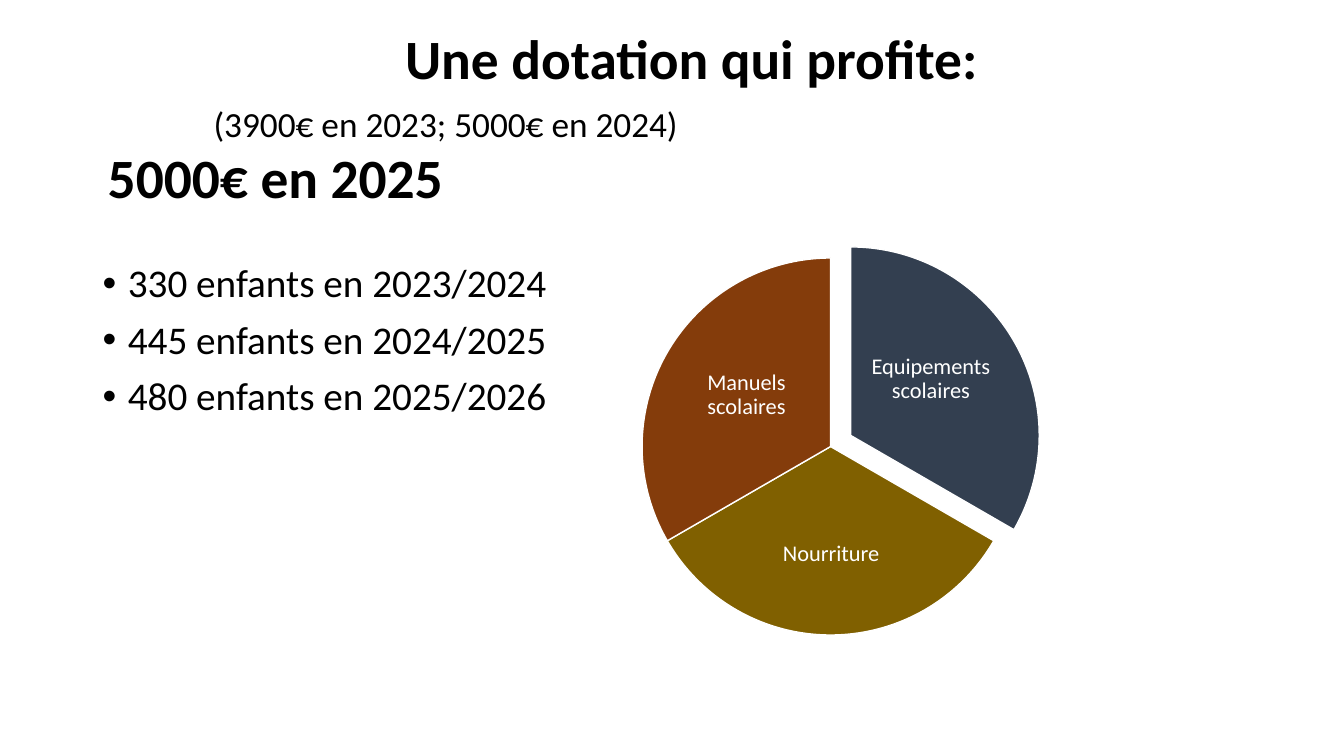
from pptx import Presentation
from pptx.dml.color import RGBColor
from pptx.enum.shapes import MSO_SHAPE as Shape
from pptx.enum.text import MSO_ANCHOR as Anchor, PP_ALIGN as Align
from pptx.oxml.ns import qn
from pptx.util import Inches, Pt
from lxml.etree import SubElement

COLORS = {
    "text": "000000",
    "label": "FFFFFF",
    "equipment": "333F50",
    "food": "806000",
    "books": "843C0B",
}
SLIDE_W, SLIDE_H = Inches(13.333), Inches(7.5)
FONT = "Calibri"
PIE_CENTER = (61.8, 59.07)
PIE_SIZE = (28.05, 49.87)
DEGREE = 0.6

HEADING = [
    ("Une dotation qui profite:", 39.6, True, 3, 0),
    ("(3900€ en 2023; 5000€ en 2024)", 25.2, False, 1.1, 11),
    ("5000€ en 2025", 39.6, True, 0.05, 4),
]
PUPILS = [
    "330 enfants en 2023/2024",
    "445 enfants en 2024/2025",
    "480 enfants en 2025/2026",
]
SHARES = [
    ("Equipements scolaires", "equipment", (1.5, -1.47), (64.5, 41.87, 9.53, 16.67)),
    ("Nourriture", "food", (0, 0), (55.5, 65.6, 12.68, 15.47)),
    ("Manuels scolaires", "books", (0, 0), (50.78, 44, 9.53, 16.67)),
]


def color(name):
    return RGBColor.from_string(COLORS[name])


def place(x, y, w, h):
    return [round(side * share / 100)
            for side, share in zip((SLIDE_W, SLIDE_H) * 2, (x, y, w, h))]


def add_text_frame(slide, area, anchor):
    frame = slide.shapes.add_textbox(*place(*area)).text_frame
    frame.word_wrap = True
    frame.vertical_anchor = anchor
    return frame


def write_lines(frame, lines):
    frame.text = "\n".join(lines)
    return frame.paragraphs


def style(paragraph, size, color_name="text", bold=False, before=0):
    paragraph.line_spacing = 0.9
    paragraph.space_before = Pt(before)
    for run in paragraph.runs:
        run.font.name = FONT
        run.font.size = Pt(size)
        run.font.bold = bold
        run.font.color.rgb = color(color_name)


def indent(paragraph, margin, hanging=0):
    properties = paragraph._p.get_or_add_pPr()
    properties.set("marL", str(Inches(margin)))
    properties.set("indent", str(-Inches(hanging)))
    return properties


def add_heading(slide):
    frame = add_text_frame(slide, (6.9, 5.33, 86.25, 21.33), Anchor.MIDDLE)
    lines = write_lines(frame, [row[0] for row in HEADING])
    for line, (_, size, bold, margin, before) in zip(lines, HEADING):
        indent(line, margin)
        style(line, size, bold=bold, before=before)


def add_pupil_list(slide):
    frame = add_text_frame(slide, (6.9, 34.27, 86.25, 55.87), Anchor.TOP)
    for row, line in enumerate(write_lines(frame, PUPILS)):
        properties = indent(line, 0.25, 0.25)
        SubElement(properties, qn("a:buFont"), typeface="Arial")
        SubElement(properties, qn("a:buChar"), char="•")
        style(line, 28, before=10 if row else 0)


def add_slice(slide, start, end, color_name, shift):
    corner = [center - size / 2 + move
              for center, size, move in zip(PIE_CENTER, PIE_SIZE, shift)]
    wedge = slide.shapes.add_shape(Shape.PIE, *place(*corner, *PIE_SIZE))
    wedge.adjustments[0] = start * DEGREE
    wedge.adjustments[1] = end * DEGREE
    wedge.shadow.inherit = False
    wedge.fill.solid()
    wedge.fill.fore_color.rgb = color(color_name)
    wedge.line.color.rgb = color("label")
    wedge.line.width = Pt(1)


def add_slice_label(slide, label, area):
    frame = add_text_frame(slide, area, Anchor.MIDDLE)
    frame.margin_left = frame.margin_right = Inches(0.02)
    frame.margin_top = frame.margin_bottom = Inches(0.02)
    line, = write_lines(frame, [label])
    line.alignment = Align.CENTER
    style(line, 16, "label")


def add_budget_pie(slide):
    sweep = 360 / len(SHARES)
    for position, (label, color_name, shift, area) in enumerate(SHARES):
        start = (270 + position * sweep) % 360
        add_slice(slide, start, (start + sweep) % 360, color_name, shift)
        add_slice_label(slide, label, area)


def main():
    deck = Presentation()
    deck.slide_width, deck.slide_height = SLIDE_W, SLIDE_H
    slide = deck.slides.add_slide(deck.slide_layouts[6])
    add_heading(slide)
    add_pupil_list(slide)
    add_budget_pie(slide)
    deck.save("out.pptx")


if __name__ == "__main__":
    main()
